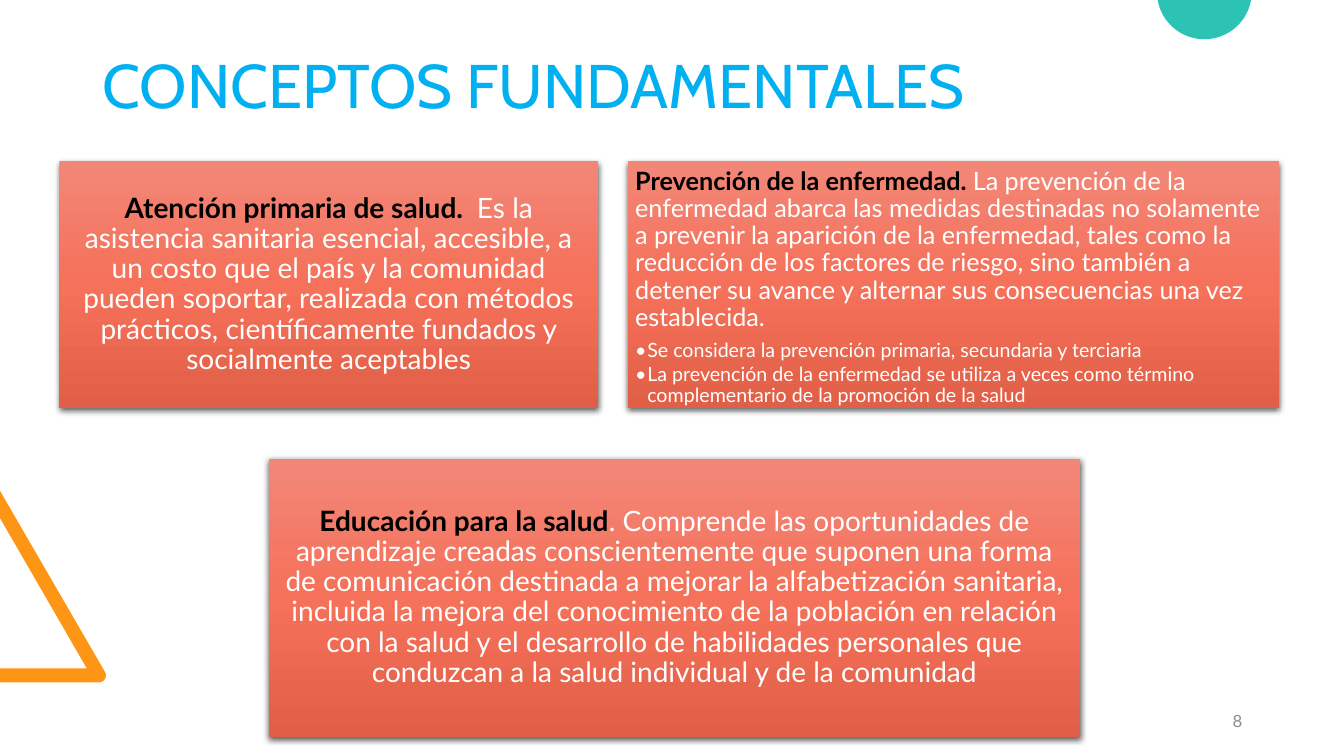
from copy import deepcopy
from math import cos, radians, sin

from lxml import etree
from pptx import Presentation
from pptx.dml.color import RGBColor
from pptx.enum.shapes import MSO_SHAPE
from pptx.enum.text import MSO_ANCHOR, MSO_AUTO_SIZE, PP_ALIGN
from pptx.oxml.ns import qn
from pptx.util import Inches, Pt

RECTANGLE = MSO_SHAPE.RECTANGLE
TOP, MIDDLE = MSO_ANCHOR.TOP, MSO_ANCHOR.MIDDLE
LEFT, CENTER, RIGHT = PP_ALIGN.LEFT, PP_ALIGN.CENTER, PP_ALIGN.RIGHT
NO_AUTOFIT = MSO_AUTO_SIZE.NONE

TITLE_FONT, BODY_FONT = "Cabin", "Lato"
BLACK, WHITE = "000000", "FFFFFF"
TITLE_BLUE, NUMBER_GREY = "00B0F0", "8C8C8C"
ORANGE, TEAL = "FF9514", "2CC3B4"
CARD_GRADIENT = [(0, "F28777"), (0.5, "F5715A"), (1, "E25F47")]

PRIMARY_CARE = (
    "Atención primaria de salud.  ",
    "Es la asistencia sanitaria esencial, accesible, a un costo que el país y la "
    "comunidad pueden soportar, realizada con métodos prácticos, científicamente "
    "fundados y socialmente aceptables",
)
PREVENTION = (
    "Prevención de la enfermedad. ",
    "La prevención de la enfermedad abarca las medidas destinadas no solamente a "
    "prevenir la aparición de la enfermedad, tales como la reducción de los factores "
    "de riesgo, sino también a detener su avance y alternar sus consecuencias una vez "
    "establecida.",
)
PREVENTION_POINTS = [
    "Se considera la prevención primaria, secundaria y terciaria",
    "La prevención de la enfermedad se utiliza a veces como término complementario "
    "de la promoción de la salud",
]
EDUCATION = (
    "Educación para la salud",
    ". Comprende las oportunidades de aprendizaje creadas conscientemente que suponen "
    "una forma de comunicación destinada a mejorar la alfabetización sanitaria, "
    "incluida la mejora del conocimiento de la población en relación con la salud y el "
    "desarrollo de habilidades personales que conduzcan a la salud individual y de la "
    "comunidad",
)


def color(hex_value):
    return RGBColor.from_string(hex_value)


def add_run(paragraph, text, size, hex_value, font=BODY_FONT, bold=False):
    run = paragraph.add_run()
    run.text = text
    run.font.name = font
    run.font.size = Pt(size)
    run.font.bold = bold
    run.font.color.rgb = color(hex_value)


def arc(center_x, center_y, radius, start, end, steps=40):
    """Return points on an arc; degrees run clockwise from the right."""
    angles = [radians(start + (end - start) * i / steps) for i in range(steps + 1)]
    return [(center_x + radius * cos(a), center_y + radius * sin(a)) for a in angles]


def add_outline(slide, points, hex_value):
    corners = [(Inches(x), Inches(y)) for x, y in points]
    builder = slide.shapes.build_freeform(*corners[0])
    builder.add_line_segments(corners[1:], close=True)
    shape = builder.convert_to_shape()
    shape.shadow.inherit = False
    shape.fill.solid()
    shape.fill.fore_color.rgb = color(hex_value)
    shape.line.fill.background()


def add_decorations(slide):
    triangle = [(0, 6.77), (0, 6.63), (0.86, 6.63), (0, 5.14), (0, 4.87)]
    add_outline(slide, triangle + arc(0.98, 6.7, 0.07, -30, 90), ORANGE)
    add_outline(slide, arc(11.945, -0.08, 0.47, 10, 170), TEAL)


def add_title(slide, text, left, top, width, height):
    title = slide.shapes.title
    title.left, title.top = Inches(left), Inches(top)
    title.width, title.height = Inches(width), Inches(height)
    frame = title.text_frame
    frame.auto_size = NO_AUTOFIT
    frame.vertical_anchor = MIDDLE
    paragraph = frame.paragraphs[0]
    paragraph.alignment = LEFT
    paragraph.line_spacing = 0.9
    add_run(paragraph, text, 44, TITLE_BLUE, TITLE_FONT)


def style_card(shape):
    """Apply the three-stop gradient and the soft shadow below."""
    shape.line.fill.background()
    shape.fill.gradient()
    shape.fill.gradient_angle = 270
    stop_list = shape._element.spPr.find(qn("a:gradFill")).find(qn("a:gsLst"))
    stop_list.append(deepcopy(stop_list[-1]))
    for stop, (position, hex_value) in zip(shape.fill.gradient_stops, CARD_GRADIENT):
        stop.position = position
        stop.color.rgb = color(hex_value)
    shape.shadow.inherit = False
    effects = shape._element.spPr.find(qn("a:effectLst"))
    shadow = etree.SubElement(
        effects, qn("a:outerShdw"), blurRad=str(Pt(4.5)), dist=str(Pt(1.5)),
        dir="5400000", algn="ctr", rotWithShape="0")
    shadow_color = etree.SubElement(shadow, qn("a:srgbClr"), val=BLACK)
    etree.SubElement(shadow_color, qn("a:alpha"), val="63000")


def add_bullet(frame, text, size):
    paragraph = frame.add_paragraph()
    properties = paragraph._p.get_or_add_pPr()
    properties.set("marL", str(Inches(0.12)))
    properties.set("indent", str(-Inches(0.12)))
    etree.SubElement(properties, qn("a:buFont"), typeface=BODY_FONT)
    etree.SubElement(properties, qn("a:buChar"), char="•")
    paragraph.alignment = LEFT
    paragraph.line_spacing = 0.9
    paragraph.space_after = Pt(size * 0.15)
    add_run(paragraph, text, size, WHITE)


def add_card(slide, concept, left, top, width, height, size=20, inset=0.08,
             alignment=CENTER, anchor=MIDDLE, points=()):
    card = slide.shapes.add_shape(
        RECTANGLE, Inches(left), Inches(top), Inches(width), Inches(height))
    style_card(card)
    frame = card.text_frame
    frame.word_wrap = True
    frame.vertical_anchor = anchor
    frame.margin_left = frame.margin_right = Inches(inset)
    frame.margin_top = frame.margin_bottom = Inches(inset)
    paragraph = frame.paragraphs[0]
    paragraph.alignment = alignment
    paragraph.line_spacing = 0.9
    term, definition = concept
    add_run(paragraph, term, size, BLACK, bold=True)
    add_run(paragraph, definition, size, WHITE)
    if points:
        paragraph.space_after = Pt(size * 0.35)
    for point in points:
        add_bullet(frame, point, 14)


def add_concepts(slide, left, top):
    """Place two cards in a row and a third one centred beneath them."""
    first_width, second_width, last_width = 5.34, 6.46, 8.04
    row_height, gap, row_gap = 2.45, 0.3, 0.5
    total_width = first_width + gap + second_width
    add_card(slide, PRIMARY_CARE, left, top, first_width, row_height)
    add_card(slide, PREVENTION, left + first_width + gap, top, second_width, row_height,
             size=18, inset=0.07, alignment=LEFT, anchor=TOP, points=PREVENTION_POINTS)
    add_card(slide, EDUCATION, left + (total_width - last_width) / 2 + 0.05,
             top + row_height + row_gap, last_width, 2.76)


def add_slide_number(slide, number, left, top, width, height):
    box = slide.shapes.add_textbox(
        Inches(left), Inches(top), Inches(width), Inches(height))
    frame = box.text_frame
    frame.word_wrap = True
    frame.vertical_anchor = MIDDLE
    paragraph = frame.paragraphs[0]
    paragraph.alignment = RIGHT
    add_run(paragraph, number, 12, NUMBER_GREY)


def main():
    presentation = Presentation()
    presentation.slide_width = Inches(13.33)
    presentation.slide_height = Inches(7.5)
    slide = presentation.slides.add_slide(presentation.slide_layouts[5])
    add_decorations(slide)
    add_title(slide, "CONCEPTOS FUNDAMENTALES", 0.92, 0.15, 11.5, 1.45)
    add_slide_number(slide, "8", 9.42, 6.95, 3, 0.4)
    add_concepts(slide, 0.59, 1.6)
    presentation.save("out.pptx")


if __name__ == "__main__":
    main()
